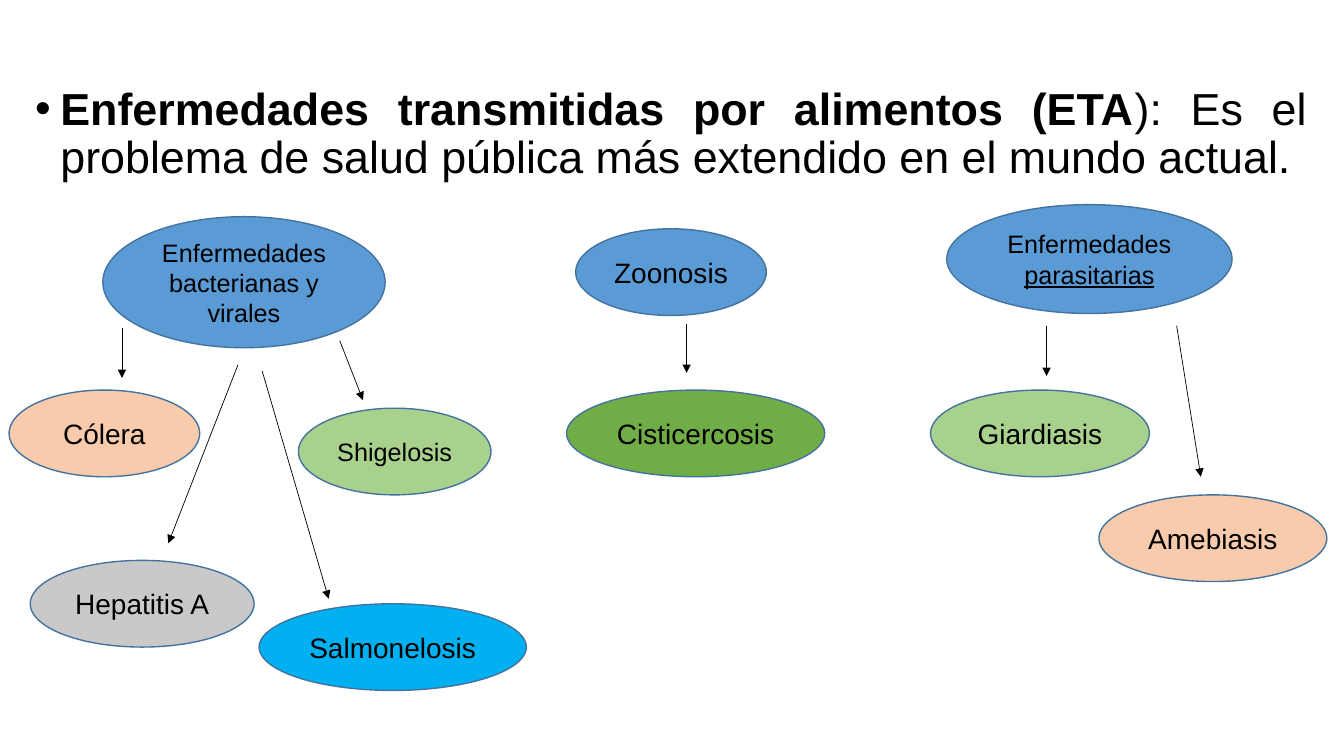
from lxml.etree import SubElement
from pptx import Presentation
from pptx.dml.color import RGBColor
from pptx.enum.shapes import MSO_CONNECTOR, MSO_SHAPE
from pptx.enum.text import MSO_ANCHOR, PP_ALIGN
from pptx.oxml.ns import qn
from pptx.util import Inches, Pt

COLORS = {
    "black": "000000", "outline": "43739E", "blue": "5B9BD5", "gray": "C9C9C9",
    "peach": "F8CBAD", "light green": "A9D18E", "green": "70AD47", "cyan": "00B0F0",
}

presentation = Presentation()
presentation.slide_width = Inches(13.33)
presentation.slide_height = Inches(7.5)
slide = presentation.slides.add_slide(presentation.slide_layouts[6])
COLUMN = presentation.slide_width / 133.3
ROW = presentation.slide_height / 75


def place(column, row):
    return round(column * COLUMN), round(row * ROW)


def add_text(paragraph, text, size=20, bold=False, underline=False):
    run = paragraph.add_run()
    run.text = text
    run.font.name = "Arial"
    run.font.size = Pt(size)
    run.font.bold = bold
    run.font.underline = underline
    run.font.color.rgb = RGBColor.from_string(COLORS["black"])


definition = slide.shapes.add_textbox(*place(2.5, 8.1), *place(128.1, 64.8))
definition.text_frame.word_wrap = True
paragraph = definition.text_frame.paragraphs[0]
paragraph.alignment = PP_ALIGN.JUSTIFY
paragraph.line_spacing = 0.9
properties = paragraph._p.get_or_add_pPr()
properties.set("marL", str(Inches(0.25)))
properties.set("indent", str(-Inches(0.25)))
SubElement(properties, qn("a:buFont")).set("typeface", "Arial")
SubElement(properties, qn("a:buChar")).set("char", "•")
add_text(paragraph, "Enfermedades transmitidas por alimentos (ETA", size=32, bold=True)
add_text(paragraph, "): Es el problema de salud pública más extendido en el mundo actual.", size=32)

BUBBLE_ROWS = 8.6
bubbles = [
    (["Enfermedades bacterianas y virales"], 10.2, 21.5, 28, 13, "blue", 18),
    (["Hepatitis A"], 3, 55.6, 22.2, BUBBLE_ROWS, "gray", 20),
    (["Zoonosis"], 57.1, 22.7, 18.9, BUBBLE_ROWS, "blue", 20),
    (["Cólera"], 0.9, 38.7, 18.9, BUBBLE_ROWS, "peach", 20),
    (["Shigelosis"], 29.6, 40.5, 19.1, BUBBLE_ROWS, "light green", 18),
    (["Salmonelosis"], 25.7, 59.9, 26.5, BUBBLE_ROWS, "cyan", 20),
    (["Enfermedades ", "parasitarias"], 93.9, 20.3, 28.3, 10.8, "blue", 18),
    (["Giardiasis"], 92.3, 38.7, 21.7, BUBBLE_ROWS, "light green", 20),
    (["Amebiasis"], 109, 49.1, 22.6, BUBBLE_ROWS, "peach", 20),
    (["Cisticercosis"], 56.2, 38.7, 25.6, BUBBLE_ROWS, "green", 20),
]
for parts, left, top, width, height, color, size in bubbles:
    shape = slide.shapes.add_shape(MSO_SHAPE.OVAL, *place(left, top), *place(width, height))
    shape.shadow.inherit = False
    shape.fill.solid()
    shape.fill.fore_color.rgb = RGBColor.from_string(COLORS[color])
    shape.line.color.rgb = RGBColor.from_string(COLORS["outline"])
    shape.line.width = Pt(1)
    shape.text_frame.word_wrap = True
    shape.text_frame.vertical_anchor = MSO_ANCHOR.MIDDLE
    paragraph = shape.text_frame.paragraphs[0]
    paragraph.alignment = PP_ALIGN.CENTER
    for index, part in enumerate(parts):
        add_text(paragraph, part, size=size, underline=index > 0)

arrows = [
    (68.1, 32.1, 68.1, 37),
    (116.7, 32.3, 119.1, 47.3),
    (103.8, 32.3, 103.8, 37.3),
    (12.1, 32.5, 12.1, 37.5),
    (33.7, 33.8, 36, 39.7),
    (23.6, 36.2, 16.7, 53.9),
    (26, 36.8, 32.6, 59.4),
]
for start_column, start_row, end_column, end_row in arrows:
    arrow = slide.shapes.add_connector(
        MSO_CONNECTOR.STRAIGHT, *place(start_column, start_row), *place(end_column, end_row))
    arrow.line.color.rgb = RGBColor.from_string(COLORS["black"])
    arrow.line.width = Pt(0.5)
    SubElement(arrow.line._get_or_add_ln(), qn("a:tailEnd")).set("type", "triangle")
    SubElement(arrow._element.spPr, qn("a:effectLst"))

presentation.save("out.pptx")
